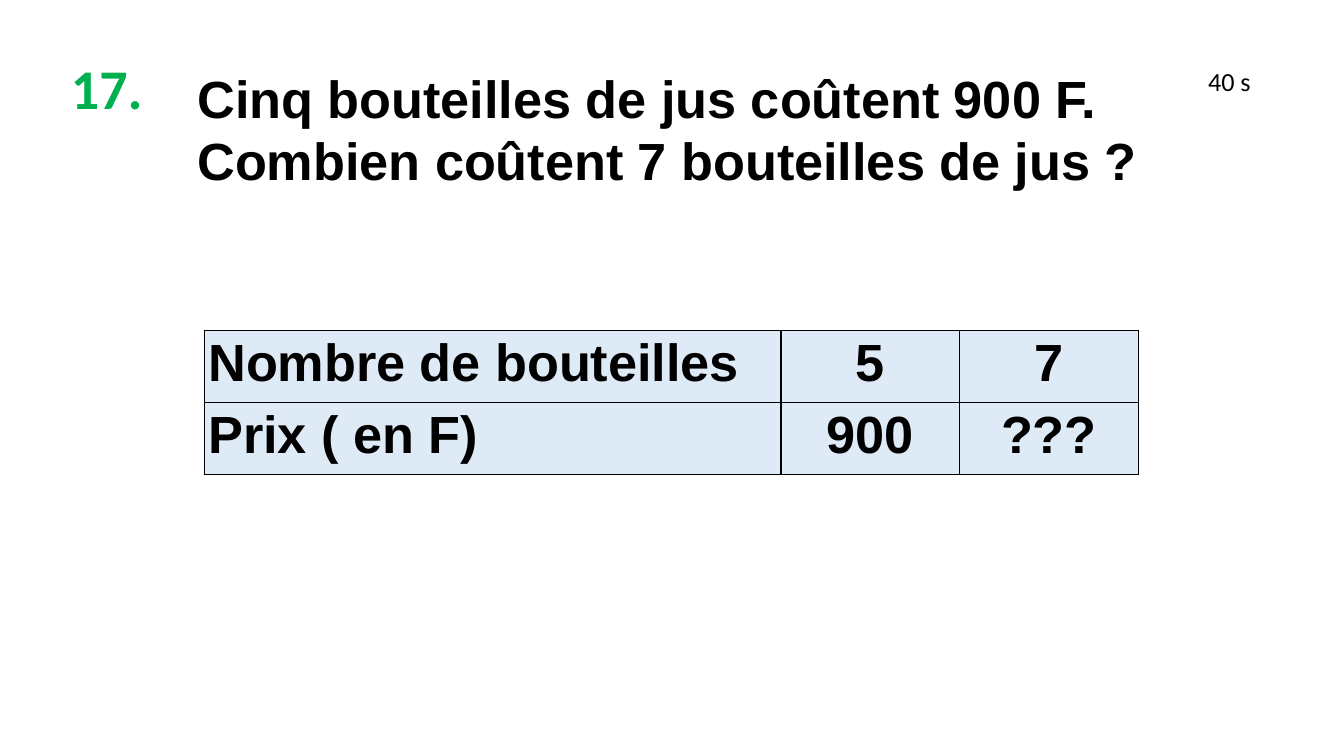
from pptx import Presentation
from pptx.dml.color import RGBColor
from pptx.enum.text import PP_ALIGN as Align
from pptx.oxml import parse_xml
from pptx.oxml.ns import nsdecls
from pptx.util import Inches, Pt

BLACK = RGBColor(0x00, 0x00, 0x00)
GREEN = RGBColor(0x00, 0xB0, 0x50)
PALE_BLUE = RGBColor(0xDE, 0xEB, 0xF7)

# Content
NUMBER = dict(name="Calibri", size=Pt(30), bold=True, color=GREEN)
TIMER = dict(name="Calibri", size=Pt(14), bold=False, color=BLACK)
STRONG = dict(name="Arial", size=Pt(28), bold=True, color=BLACK)

# Each text: lines, (left, top, width, height), format
TEXTS = [
    (["17."], (0.43, 0.35, 0.93, 0.6), NUMBER),
    (["40 s"], (8.89, 0.44, 0.58, 0.27), TIMER),
    (["Cinq bouteilles de jus coûtent 900 F.",
      "Combien coûtent 7 bouteilles de jus ?"],
     (1.37, 0.44, 7.44, 1.99), STRONG),
]
PRICES = [
    ["Nombre de bouteilles", "5", "7"],
    ["Prix ( en F)", "900", "???"],
]
COLUMN_WIDTHS = [4.29, 1.33, 1.33]
TABLE_LEFT, TABLE_TOP, TABLE_HEIGHT = 1.52, 2.46, 1.07
CELL_MARGIN = Inches(0.03)


def write(para, text, style):
    span = para.add_run()
    span.text = text
    for key, value in style.items():
        if key == "color":
            span.font.color.rgb = value
        else:
            setattr(span.font, key, value)


def add_borders(cell):
    properties = cell._tc.get_or_add_tcPr()
    for index, side in enumerate(("lnL", "lnR", "lnT", "lnB")):
        properties.insert(index, parse_xml(
            f'<a:{side} {nsdecls("a")} w="{Pt(1)}"><a:solidFill>'
            f'<a:srgbClr val="{BLACK}"/></a:solidFill></a:{side}>'))


# Widescreen page, 16:9
deck = Presentation()
deck.slide_width = Inches(10)
deck.slide_height = Inches(10) * 9 // 16
page = deck.slides.add_slide(deck.slide_layouts[6])

# Question number, time limit and question
for lines, place, style in TEXTS:
    frame = page.shapes.add_textbox(*map(Inches, place)).text_frame
    frame.word_wrap = True
    for index, line in enumerate(lines):
        para = frame.add_paragraph() if index else frame.paragraphs[0]
        write(para, line, style)

# Price table
table = page.shapes.add_table(
    len(PRICES), len(COLUMN_WIDTHS), Inches(TABLE_LEFT), Inches(TABLE_TOP),
    Inches(sum(COLUMN_WIDTHS)), Inches(TABLE_HEIGHT)).table
for column, width in zip(table.columns, COLUMN_WIDTHS):
    column.width = Inches(width)
for row, values in zip(table.rows, PRICES):
    for index, (cell, value) in enumerate(zip(row.cells, values)):
        for side in ("left", "right", "top", "bottom"):
            setattr(cell, f"margin_{side}", CELL_MARGIN)
        cell.fill.solid()
        cell.fill.fore_color.rgb = PALE_BLUE
        add_borders(cell)
        para = cell.text_frame.paragraphs[0]
        para.alignment = Align.CENTER if index else Align.LEFT
        write(para, value, STRONG)

deck.save("out.pptx")
